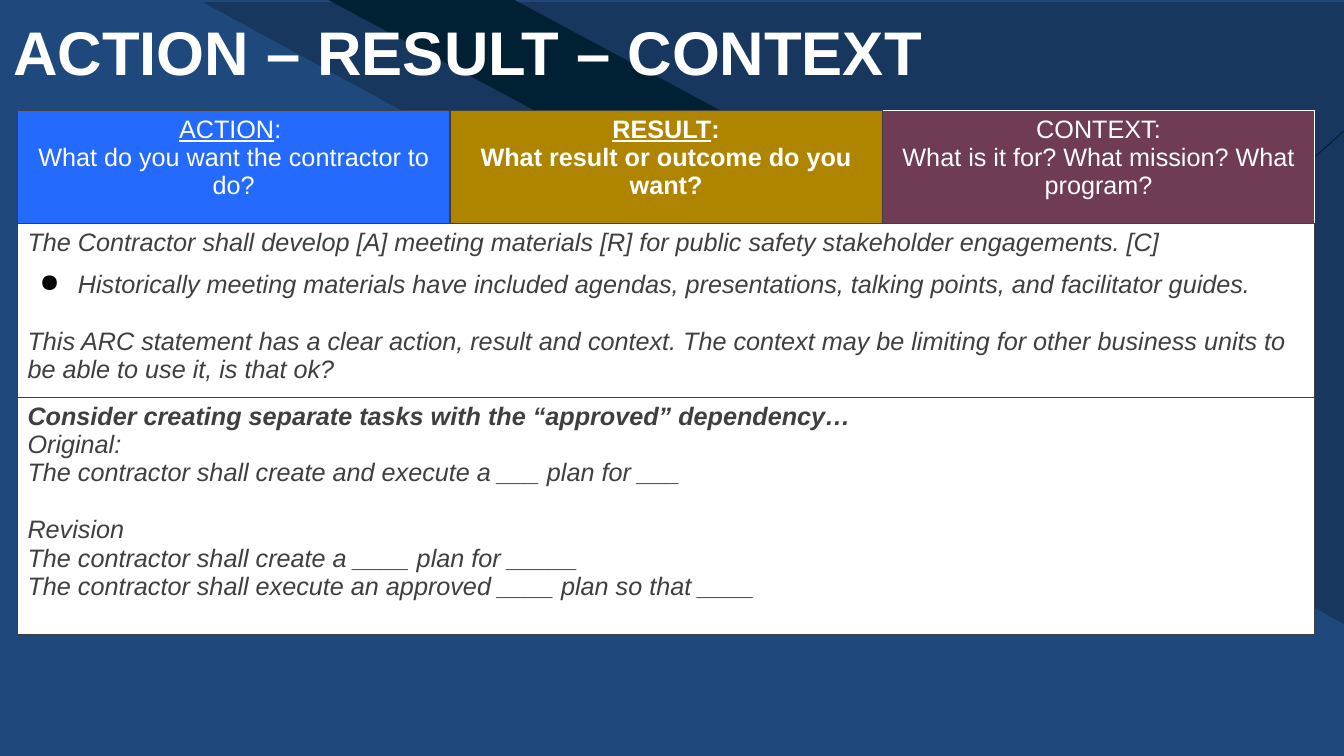
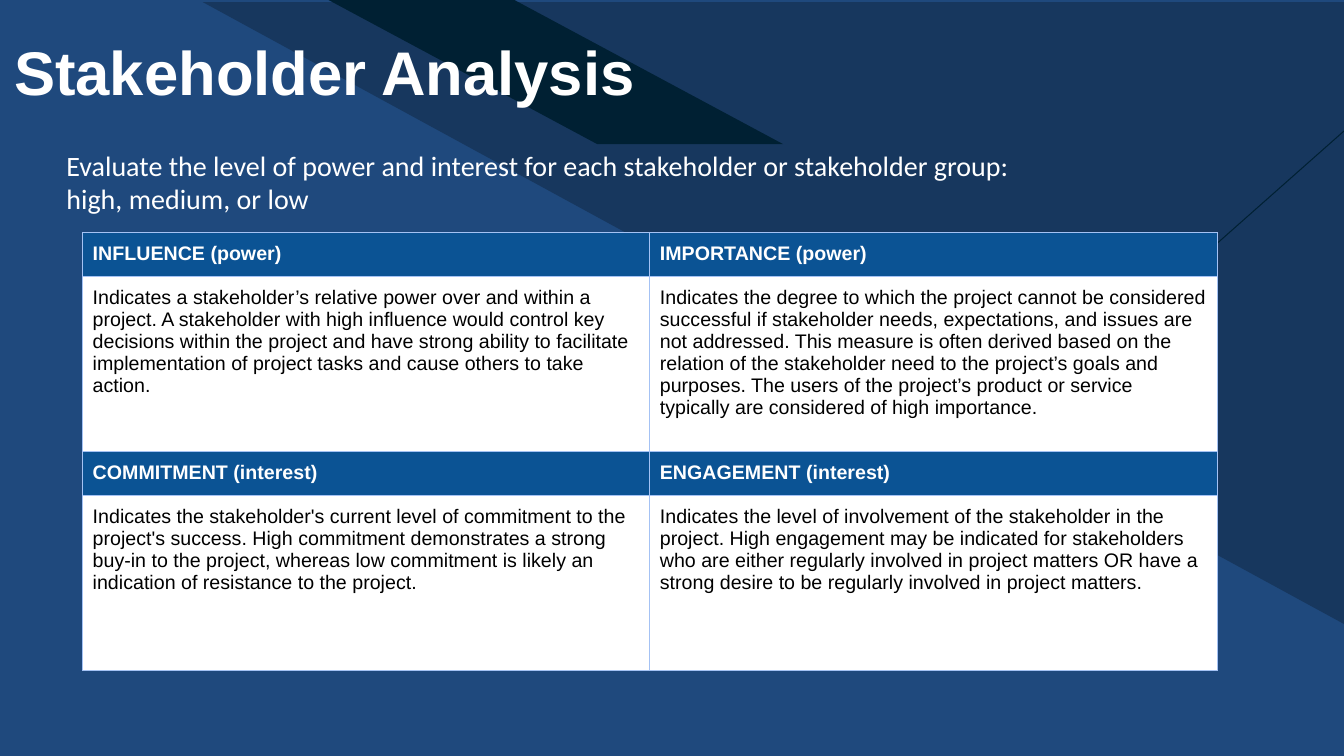
from dataclasses import dataclass

from lxml import etree
from pptx import Presentation
from pptx import util as u
from pptx.dml.color import RGBColor
from pptx.enum import shapes, text
from pptx.oxml.ns import qn

SLIDE_W, SLIDE_H = u.Inches(13.33), u.Inches(7.5)

NAVY, DEEP_NAVY, INK = "1F497D", "17375E", "002033"
WHITE, BLACK, CHARCOAL = "FFFFFF", "000000", "3F3F3F"
BLUE, GOLD, PLUM = "256AFF", "AF8500", "6F3B55"
HEADING_BLUE, PALE_BLUE = "0B5394", "A4C2F4"
EMPTY_LINE = 20.7  # height of one 18 pt line, in points


@dataclass(frozen=True)
class Box:
    """Position and size in percent of the slide's width and height."""
    left: float
    top: float
    width: float
    height: float

    def emu(self) -> tuple:
        return across(self.left), down(self.top), across(self.width), down(self.height)


@dataclass(frozen=True)
class Line:
    """One paragraph; lead is an underlined opening."""
    words: str
    lead: str = ""
    bold: bool = False
    space: float = 0
    bullet: bool = False


@dataclass(frozen=True)
class Border:
    color: str
    points: float


@dataclass(frozen=True)
class ArcPart:
    lines: tuple
    fill: str


@dataclass(frozen=True)
class Measure:
    heading: str
    meaning: str


def across(share: float) -> int:
    return round(SLIDE_W * share / 100)


def down(share: float) -> int:
    return round(SLIDE_H * share / 100)


def rgb(color: str) -> RGBColor:
    return RGBColor.from_string(color)


def add_bullet(paragraph) -> None:
    properties = paragraph._p.get_or_add_pPr()
    properties.set("marL", str(u.Inches(0.5)))
    properties.set("indent", str(u.Inches(-0.38)))
    color = etree.SubElement(properties, qn("a:buClr"))
    etree.SubElement(color, qn("a:srgbClr"), val=BLACK)
    etree.SubElement(properties, qn("a:buChar"), char="●")


def write(frame, lines, *, size: float, color: str, font: str = "Arial",
          bold: bool = False, italic: bool = False, spacing: float = 1.0,
          align=text.PP_ALIGN.LEFT) -> None:
    for index, line in enumerate(lines):
        paragraph = frame.add_paragraph() if index else frame.paragraphs[0]
        if line.bullet:
            add_bullet(paragraph)
        paragraph.alignment = align
        paragraph.line_spacing = spacing
        paragraph.space_before = u.Pt(line.space)
        for words, underlined in ((line.lead, True), (line.words, False)):
            if not words:
                continue
            run = paragraph.add_run()
            run.text = words
            run.font.name, run.font.size = font, u.Pt(size)
            run.font.bold, run.font.italic = bold or line.bold, italic
            run.font.underline = underlined
            run.font.color.rgb = rgb(color)


def add_text(slide, box: Box, words: str, *, margin: float,
             anchor=text.MSO_ANCHOR.TOP, **style) -> None:
    frame = slide.shapes.add_textbox(*box.emu()).text_frame
    frame.word_wrap = True
    frame.vertical_anchor = anchor
    frame.margin_left = frame.margin_right = u.Inches(margin)
    frame.margin_top = frame.margin_bottom = u.Inches(margin)
    write(frame, [Line(words)], **style)


def add_backdrop_shape(slide, kind, box: Box, color: str):
    shape = slide.shapes.add_shape(kind, *box.emu())
    shape.shadow.inherit = False
    shape.fill.solid()
    shape.fill.fore_color.rgb = rgb(color)
    shape.line.fill.background()
    return shape


def add_titled_slide(deck, title: str, left: float, top: float):
    slide = deck.slides.add_slide(deck.slide_layouts[6])
    triangle = add_backdrop_shape(slide, shapes.MSO_SHAPE.RIGHT_TRIANGLE,
                                  Box(15.08, 0.27, 84.92, 82.27), DEEP_NAVY)
    triangle.rotation = 180
    band = add_backdrop_shape(slide, shapes.MSO_SHAPE.PARALLELOGRAM,
                              Box(24.45, 0, 33.83, 19.07), INK)
    band.adjustments[0] = 1.864
    band._element.spPr.find(qn("a:xfrm")).set("flipH", "1")
    diagonal = slide.shapes.add_connector(
        shapes.MSO_CONNECTOR.STRAIGHT, across(84.92), down(41.07), across(100), down(17.33))
    diagonal.line.color.rgb = rgb(INK)
    diagonal.line.width = u.Pt(0.75)
    etree.SubElement(diagonal._element.spPr, qn("a:effectLst"))
    add_text(slide, Box(left, top, 93.17, 11.2), title, margin=0.13,
             anchor=text.MSO_ANCHOR.MIDDLE, size=44, color=WHITE, bold=True, spacing=0.9)
    return slide


def add_grid(slide, left: float, top: float, width: float, columns: int, row_shares):
    box = Box(left, top, width, sum(row_shares))
    table = slide.shapes.add_table(len(row_shares), columns, *box.emu()).table
    table.first_row = table.horz_banding = False
    for column in table.columns:
        column.width = across(width / columns)
    for row, share in zip(table.rows, row_shares):
        row.height = down(share)
    return table


def style_cell(cell, fill: str, border: Border, margin: float, **sides: Border) -> None:
    """Sides L, R, T and B may replace the common border."""
    properties = cell._tc.get_or_add_tcPr()
    for side in "LRTB":
        edge = sides.get(side, border)
        outline = etree.SubElement(properties, qn(f"a:ln{side}"), w=str(u.Pt(edge.points)))
        paint = etree.SubElement(outline, qn("a:solidFill"))
        etree.SubElement(paint, qn("a:srgbClr"), val=edge.color)
    cell.fill.solid()
    cell.fill.fore_color.rgb = rgb(fill)
    cell.margin_left = cell.margin_right = u.Inches(0.1)
    cell.margin_top = cell.margin_bottom = u.Inches(margin)


ARC_PARTS = (
    ArcPart((Line(": ", lead="ACTION"),
             Line("What do you want the contractor to do?")), BLUE),
    ArcPart((Line(":", lead="RESULT", bold=True),
             Line("What result or outcome do you want?", bold=True)), GOLD),
    ArcPart((Line("CONTEXT:"),
             Line("What is it for? What mission? What program?")), PLUM),
)

ARC_EXAMPLES = (
    (
        Line("The Contractor shall develop [A] meeting materials [R] for public safety "
             "stakeholder engagements. [C]"),
        Line("Historically meeting materials have included agendas, presentations, "
             "talking points, and facilitator guides.", space=10, bullet=True),
        Line("This ARC statement has a clear action, result and context. The context may be "
             "limiting for other business units to be able to use it, is that ok?",
             space=EMPTY_LINE),
    ),
    (
        Line("Consider creating separate tasks with the “approved” dependency…", bold=True),
        Line("Original:"),
        Line("The contractor shall create and execute a ___ plan for ___"),
        Line("Revision", space=EMPTY_LINE),
        Line("The contractor shall create a ____ plan for _____"),
        Line("The contractor shall execute an approved ____ plan so that ____"),
    ),
)

MEASURES = (
    Measure("INFLUENCE (power)",
            "Indicates a stakeholder’s relative power over and within a project. A stakeholder "
            "with high influence would control key decisions within the project and have strong "
            "ability to facilitate implementation of project tasks and cause others to take "
            "action."),
    Measure("IMPORTANCE (power)",
            "Indicates the degree to which the project cannot be considered successful if "
            "stakeholder needs, expectations, and issues are not addressed. This measure is "
            "often derived based on the relation of the stakeholder need to the project’s goals "
            "and purposes. The users of the project’s product or service typically are "
            "considered of high importance."),
    Measure("COMMITMENT (interest)",
            "Indicates the stakeholder's current level of commitment to the project's success. "
            "High commitment demonstrates a strong buy-in to the project, whereas low "
            "commitment is likely an indication of resistance to the project."),
    Measure("ENGAGEMENT (interest)",
            "Indicates the level of involvement of the stakeholder in the project. High "
            "engagement may be indicated for stakeholders who are either regularly involved in "
            "project matters OR have a strong desire to be regularly involved in project "
            "matters."),
)


def build_arc_slide(deck) -> None:
    slide = add_titled_slide(deck, "ACTION – RESULT – CONTEXT", 0, 1.73)
    table = add_grid(slide, 1.3, 14.6, 96.53, len(ARC_PARTS), (14.93, 21.87, 31.33))
    dark, light = Border(CHARCOAL, 1), Border(WHITE, 1)
    for column, part in enumerate(ARC_PARTS):
        is_last = column == len(ARC_PARTS) - 1
        cell = table.cell(0, column)
        style_cell(cell, part.fill, dark, 0.05, **({"T": light, "R": light} if is_last else {}))
        write(cell.text_frame, part.lines, size=18, color=WHITE, align=text.PP_ALIGN.CENTER)
    for row, example in enumerate(ARC_EXAMPLES, start=1):
        for column in range(len(ARC_PARTS)):
            style_cell(table.cell(row, column), WHITE, dark, 0.05)
        cell = table.cell(row, 0)
        cell.merge(table.cell(row, len(ARC_PARTS) - 1))
        write(cell.text_frame, example, size=18, color=CHARCOAL, italic=True)


def build_stakeholder_slide(deck) -> None:
    slide = add_titled_slide(deck, "Stakeholder Analysis", 0.08, 4.4)
    table = add_grid(slide, 6.15, 30.8, 84.4, 2, (5.55, 23.15) * 2)
    border = Border(PALE_BLUE, 0.75)
    for index, measure in enumerate(MEASURES):
        pair, column = divmod(index, 2)
        heading, meaning = (table.cell(2 * pair + offset, column) for offset in (0, 1))
        style_cell(heading, HEADING_BLUE, border, 0.1)
        write(heading.text_frame, [Line(measure.heading)], size=14, color=WHITE, bold=True)
        style_cell(meaning, WHITE, border, 0.1)
        write(meaning.text_frame, [Line(measure.meaning)], size=14, color=BLACK)
    add_text(slide, Box(4.2, 18.27, 75.92, 11.73),
             "Evaluate the level of power and interest for each stakeholder or stakeholder "
             "group: high, medium, or low",
             margin=0.1, size=20, color=WHITE, font="Calibri")


def main() -> None:
    deck = Presentation()
    deck.slide_width, deck.slide_height = SLIDE_W, SLIDE_H
    backdrop = deck.slide_master.background.fill
    backdrop.solid()
    backdrop.fore_color.rgb = rgb(NAVY)
    build_arc_slide(deck)
    build_stakeholder_slide(deck)
    deck.save("out.pptx")


if __name__ == "__main__":
    main()
